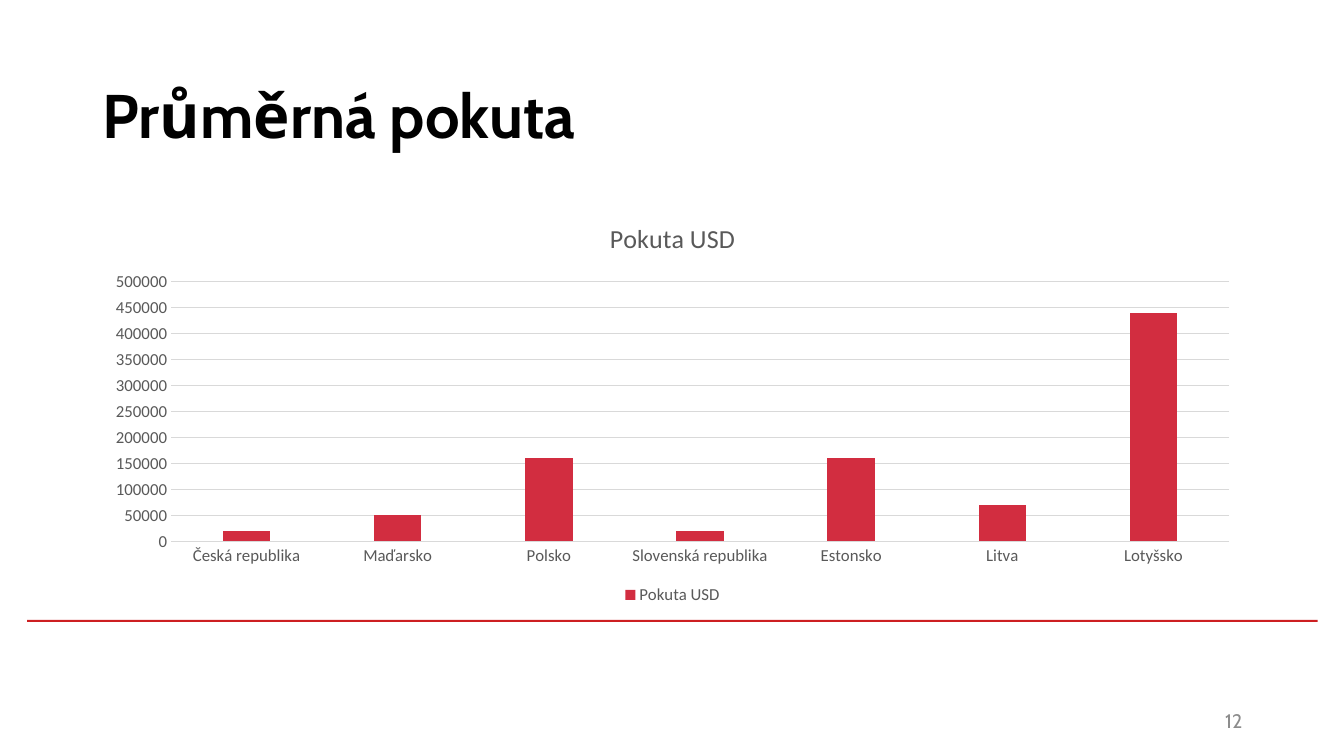
import pptx
import pptx.chart.data
import pptx.dml.color
import pptx.enum.chart
import pptx.enum.shapes
import pptx.enum.text
import pptx.util

Inches = pptx.util.Inches
Pt = pptx.util.Pt
Align = pptx.enum.text.PP_ALIGN
GRAY = "595959"
PALE = "D9D9D9"
FINES = {
    "Česká republika": 20000,
    "Maďarsko": 50000,
    "Polsko": 160000,
    "Slovenská republika": 20000,
    "Estonsko": 160000,
    "Litva": 70000,
    "Lotyšsko": 440000,
}


def color(code):
    return pptx.dml.color.RGBColor.from_string(code)


def place(*box):
    return [Inches(side) for side in box]


def style(font, name, size, code, bold=False):
    font.name = name
    font.size = Pt(size)
    font.bold = bold
    font.color.rgb = color(code)


def add_text(slide, box, text, size, code, bold=False, align=Align.LEFT):
    frame = slide.shapes.add_textbox(*place(*box)).text_frame
    frame.word_wrap = True
    frame.vertical_anchor = pptx.enum.text.MSO_ANCHOR.MIDDLE
    line = frame.paragraphs[0]
    line.alignment = align
    run = line.add_run()
    run.text = text
    style(run.font, "Cabin", size, code, bold)


def add_rule(slide, box, code):
    rule = slide.shapes.add_shape(
        pptx.enum.shapes.MSO_SHAPE.RECTANGLE, *place(*box))
    rule.shadow.inherit = False
    rule.fill.solid()
    rule.fill.fore_color.rgb = color(code)
    rule.line.fill.background()


def set_line(line):
    line.color.rgb = color(PALE)
    line.width = Pt(0.75)


def set_axis(axis):
    axis.major_tick_mark = pptx.enum.chart.XL_TICK_MARK.NONE
    axis.minor_tick_mark = pptx.enum.chart.XL_TICK_MARK.NONE
    style(axis.tick_labels.font, "Calibri", 12, GRAY)


def add_bars(slide, box, name, fines, code):
    data = pptx.chart.data.CategoryChartData()
    data.categories = list(fines)
    data.add_series(name, list(fines.values()))
    chart = slide.shapes.add_chart(
        pptx.enum.chart.XL_CHART_TYPE.COLUMN_CLUSTERED,
        *place(*box), data).chart
    style(chart.font, "Calibri", 10, "000000")

    chart.has_title = True
    run = chart.chart_title.text_frame.paragraphs[0].add_run()
    run.text = name
    style(run.font, "Calibri", 18.6, GRAY)
    chart.chart_title.include_in_layout = False

    chart.has_legend = True
    chart.legend.position = pptx.enum.chart.XL_LEGEND_POSITION.BOTTOM
    chart.legend.include_in_layout = False
    style(chart.legend.font, "Calibri", 12, GRAY)

    set_axis(chart.category_axis)
    set_line(chart.category_axis.format.line)
    set_axis(chart.value_axis)
    chart.value_axis.format.line.fill.background()
    chart.value_axis.has_major_gridlines = True
    set_line(chart.value_axis.major_gridlines.format.line)
    chart.value_axis.minimum_scale = 0
    chart.value_axis.maximum_scale = 500000
    chart.value_axis.major_unit = 50000

    plot = chart.plots[0]
    plot.vary_by_categories = False
    plot.gap_width = 219
    plot.overlap = -27
    fill = plot.series[0].format.fill
    fill.solid()
    fill.fore_color.rgb = color(code)


def main():
    deck = pptx.Presentation()
    deck.slide_width = Inches(13.33)
    deck.slide_height = Inches(7.5)
    slide = deck.slides.add_slide(deck.slide_layouts[6])
    add_rule(slide, (0.27, 6.15, 12.8, 0.02), "CD1F21")
    add_text(slide, (0.92, 0.4, 11.5, 1.45), "Průměrná pokuta",
             44, "000000", bold=True)
    add_bars(slide, (0.92, 2, 11.5, 4.04), "Pokuta USD", FINES, "D22D40")
    add_text(slide, (9.42, 6.95, 3, 0.4), "12", 14, "8C8C8C",
             align=Align.RIGHT)
    deck.save("out.pptx")


if __name__ == "__main__":
    main()
